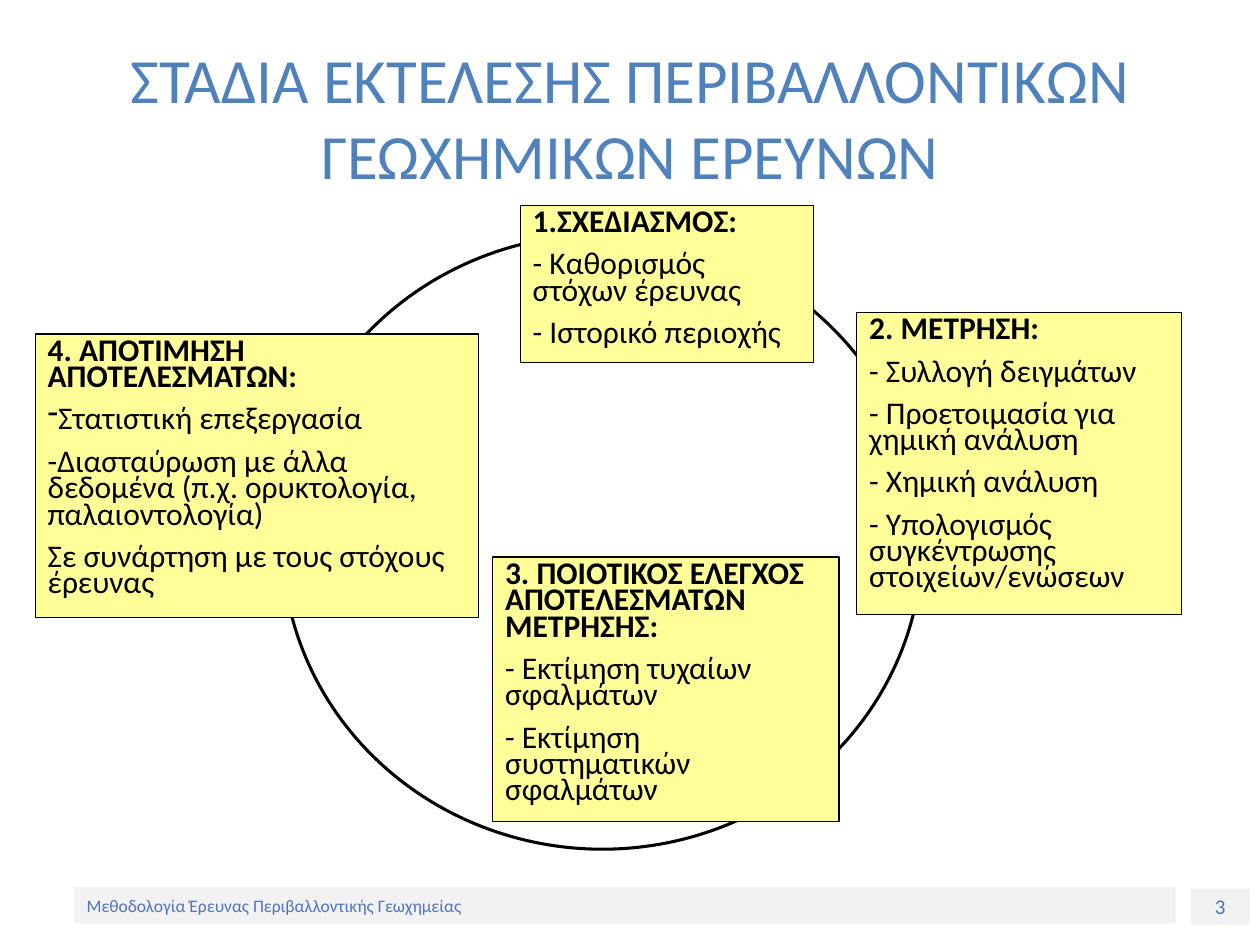
from lxml.etree import SubElement
from pptx import Presentation
from pptx.dml.color import RGBColor
from pptx.enum.shapes import MSO_SHAPE as SHAPE
from pptx.enum.text import MSO_ANCHOR as ANCHOR, PP_ALIGN as ALIGN
from pptx.oxml.ns import qn
from pptx.util import Inches, Pt

FONT = "Calibri"
BLACK = RGBColor(0x00, 0x00, 0x00)
YELLOW = RGBColor(0xFF, 0xFF, 0x99)
GREY = RGBColor(0xF2, 0xF2, 0xF2)
TITLE_BLUE = RGBColor(0x4F, 0x81, 0xBD)
FOOTER_BLUE = RGBColor(0x50, 0x75, 0xBC)

WIDTH, HEIGHT = Inches(10), Inches(7.5)
CELL = WIDTH / 100  # the slide is a grid of 100 columns and 75 rows

TITLE = "ΣΤΑΔΙΑ ΕΚΤΕΛΕΣΗΣ ΠΕΡΙΒΑΛΛΟΝΤΙΚΩΝ ΓΕΩΧΗΜΙΚΩΝ ΕΡΕΥΝΩΝ"
FOOTER = "Μεθοδολογία Έρευνας Περιβαλλοντικής Γεωχημείας"
DASH = "•"  # marks an item that takes an automatic dash

# Box on the grid, heading, items
STAGES = [
    ((41.3, 16.3, 23.3, 12.5), "1.ΣΧΕΔΙΑΣΜΟΣ:",
     ["- Καθορισμός στόχων έρευνας", "- Ιστορικό περιοχής"]),
    ((68, 24.8, 25.8, 24), "2. ΜΕΤΡΗΣΗ:",
     ["- Συλλογή δειγμάτων", "- Προετοιμασία για χημική ανάλυση",
      "- Χημική ανάλυση", "- Υπολογισμός συγκέντρωσης στοιχείων/ενώσεων"]),
    ((39.1, 44.2, 27.5, 21), "3. ΠΟΙΟΤΙΚΟΣ ΕΛΕΓΧΟΣ ΑΠΟΤΕΛΕΣΜΑΤΩΝ ΜΕΤΡΗΣΗΣ:",
     ["- Εκτίμηση τυχαίων σφαλμάτων", "- Εκτίμηση συστηματικών σφαλμάτων"]),
    ((2.8, 26.5, 35.2, 22.5), "4. ΑΠΟΤΙΜΗΣΗ ΑΠΟΤΕΛΕΣΜΑΤΩΝ:",
     [DASH + "Στατιστική επεξεργασία",
      "-Διασταύρωση με άλλα δεδομένα (π.χ. ορυκτολογία, παλαιοντολογία)",
      "Σε συνάρτηση με τους στόχους έρευνας"]),
]


def on_grid(box):
    return [round(v * CELL) for v in box]


def add_run(p, text, size, color, bold=False):
    r = p.add_run()
    r.text = text
    r.font.name, r.font.size, r.font.bold = FONT, Pt(size), bold
    r.font.color.rgb = color


def add_box(s, kind, box, fill=None, line=None):
    """Add a shape on the grid; line is a width in points, None for no line."""
    sp = s.shapes.add_shape(kind, *on_grid(box))
    sp.shadow.inherit = False
    if fill is None:
        sp.fill.background()
    else:
        sp.fill.solid()
        sp.fill.fore_color.rgb = fill
    if line is None:
        sp.line.fill.background()
    else:
        sp.line.color.rgb, sp.line.width = BLACK, Pt(line)
    sp.text_frame.word_wrap = True
    return sp


def add_title(s, box):
    sp = s.shapes.title
    sp.left, sp.top, sp.width, sp.height = on_grid(box)
    tf = sp.text_frame
    tf.vertical_anchor = ANCHOR.MIDDLE
    p = tf.paragraphs[0]
    p.alignment = ALIGN.CENTER
    add_run(p, TITLE, 36, TITLE_BLUE)


def add_dash(p):
    pPr = p._p.get_or_add_pPr()
    pPr.set("marL", "0")
    pPr.set("indent", "0")
    SubElement(pPr, qn("a:buFontTx"))
    SubElement(pPr, qn("a:buChar")).set("char", "-")


def add_stage(s, box, heading, items):
    tf = add_box(s, SHAPE.RECTANGLE, box, YELLOW, 0.75).text_frame
    tf.vertical_anchor = ANCHOR.TOP
    for i, text in enumerate([heading, *items]):
        p = tf.add_paragraph() if i else tf.paragraphs[0]
        if text.startswith(DASH):
            add_dash(p)
        p.alignment = ALIGN.LEFT
        p.line_spacing = 0.7
        p.space_before = Pt(9 if i else 0)
        add_run(p, text.removeprefix(DASH), 18, BLACK, bold=i == 0)


def add_footer_cell(s, box, text, size, align):
    tf = add_box(s, SHAPE.RECTANGLE, box, GREY).text_frame
    tf.vertical_anchor = ANCHOR.MIDDLE
    p = tf.paragraphs[0]
    p.alignment = align
    add_run(p, text, size, FOOTER_BLUE)


def main():
    prs = Presentation()
    prs.slide_width, prs.slide_height = WIDTH, HEIGHT
    s = prs.slides.add_slide(prs.slide_layouts[5])
    add_footer_cell(s, (94.5, 70.5, 4.7, 2.9), "3", 12, ALIGN.CENTER)
    add_footer_cell(s, (5.9, 70.4, 87.4, 2.9), FOOTER, 10, ALIGN.LEFT)
    add_title(s, (5, 3, 90, 12.5))
    add_box(s, SHAPE.OVAL, (22.4, 18.6, 50.8, 48.8), line=1.75)
    for stage in STAGES:
        add_stage(s, *stage)
    prs.save("out.pptx")


if __name__ == "__main__":
    main()
